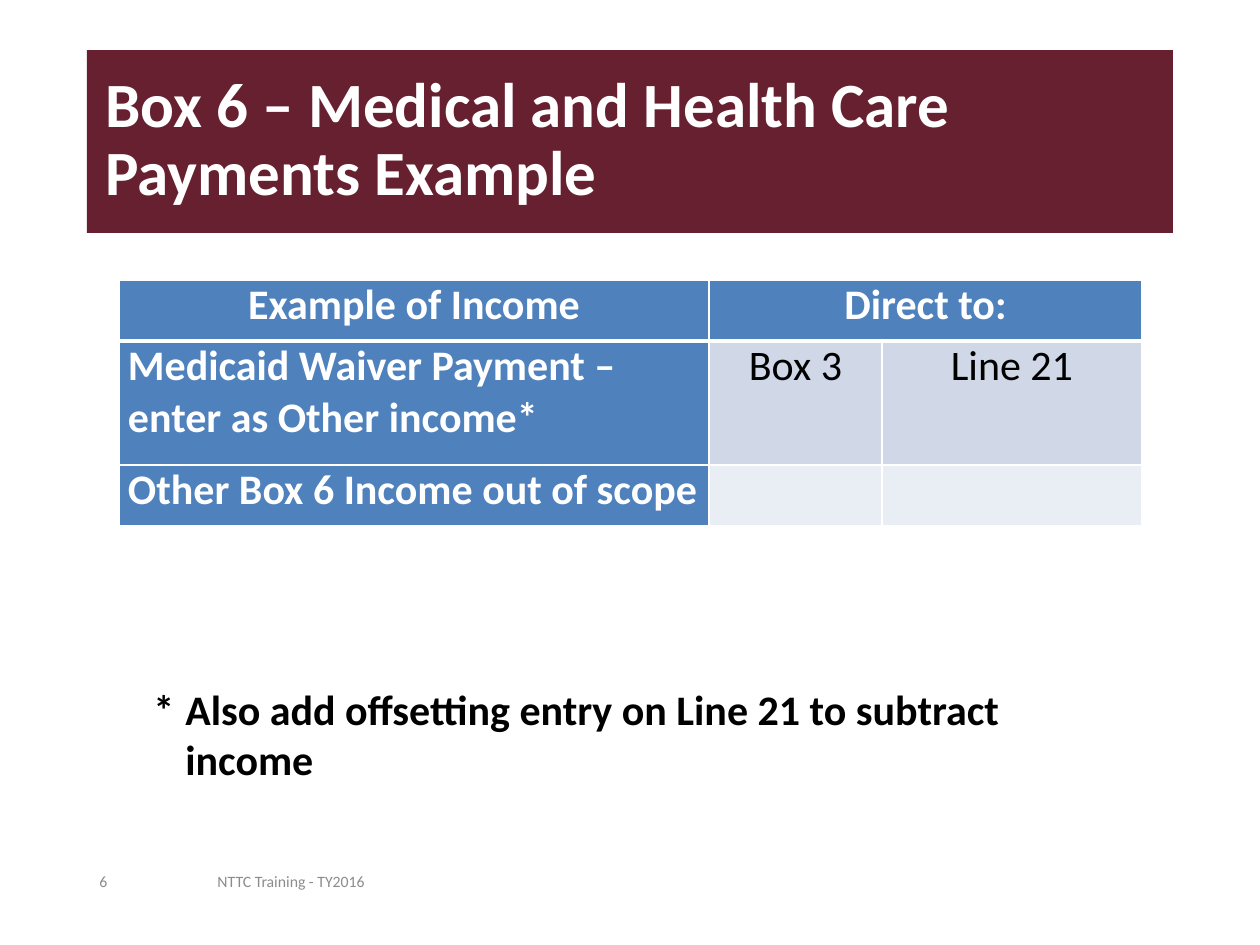
from lxml import etree
from pptx import Presentation
from pptx.dml.color import RGBColor
from pptx.enum.shapes import MSO_SHAPE
from pptx.enum.text import MSO_ANCHOR, PP_ALIGN
from pptx.oxml.ns import qn
from pptx.util import Emu, Pt

RECTANGLE = MSO_SHAPE.RECTANGLE
TOP, MIDDLE = MSO_ANCHOR.TOP, MSO_ANCHOR.MIDDLE
LEFT, CENTER = PP_ALIGN.LEFT, PP_ALIGN.CENTER

EMU_PER_PX = 914400 / 126
FONT = "Calibri"
COLORS = {
    "banner": "67202F",
    "header": "4F81BD",
    "band_dark": "D0D8E8",
    "band_light": "E9EDF4",
    "white": "FFFFFF",
    "black": "000000",
    "footer": "8C8C8C",
}


def px(length):
    return Emu(round(length * EMU_PER_PX))


def rgb(name):
    return RGBColor.from_string(COLORS[name])


def write_text(frame, text, size=24, color="black", bold=False, align=LEFT,
               anchor=TOP, margin=0, indent=0, line_spacing=None):
    """Fill a text frame with one formatted paragraph."""
    frame.word_wrap = True
    frame.vertical_anchor = anchor
    paragraph = frame.paragraphs[0]
    paragraph.text = text
    paragraph.alignment = align
    paragraph.line_spacing = line_spacing
    properties = paragraph._p.get_or_add_pPr()
    properties.set("marL", str(px(margin)))
    properties.set("indent", str(px(indent)))
    font = paragraph.runs[0].font
    font.name, font.size, font.bold = FONT, Pt(size), bold
    font.color.rgb = rgb(color)


def add_text(slide, box, text, **text_format):
    shape = slide.shapes.add_textbox(*map(px, box))
    write_text(shape.text_frame, text, **text_format)


def set_borders(cell, **widths):
    """Draw white borders; widths are points by side."""
    properties = cell._tc.get_or_add_tcPr()
    for position, side in enumerate("LRTB"):
        line = etree.Element(qn(f"a:ln{side}"), w=str(Pt(widths.get(side, 1))))
        fill = etree.SubElement(line, qn("a:solidFill"))
        etree.SubElement(fill, qn("a:srgbClr"), val=COLORS["white"])
        properties.insert(position, line)


def add_banner(slide, box, title):
    shape = slide.shapes.add_shape(RECTANGLE, *map(px, box))
    shape.shadow.inherit = False
    shape.fill.solid()
    shape.fill.fore_color.rgb = rgb("banner")
    shape.line.fill.background()
    write_text(shape.text_frame, title, size=36, color="white", bold=True,
               anchor=MIDDLE, margin=6, line_spacing=0.9)


def add_income_table(slide, box, columns, heights, rows):
    table = slide.shapes.add_table(len(rows), len(columns), *map(px, box)).table
    for column, width in zip(table.columns, columns):
        column.width = px(width)
    for row, height in zip(table.rows, heights):
        row.height = px(height)

    for r, texts in enumerate(rows):
        for c, text in enumerate(texts):
            cell = table.cell(r, c)
            is_heading = r == 0 or c == 0
            band = "band_dark" if r % 2 else "band_light"
            cell.fill.solid()
            cell.fill.fore_color.rgb = rgb("header" if is_heading else band)
            cell.margin_left = cell.margin_right = px(9)
            cell.margin_top = cell.margin_bottom = 0
            # Heavier rule under the header row
            set_borders(cell, T=3 if r == 1 else 1, B=3 if r == 0 else 1)
            if text:
                write_text(cell.text_frame, text, bold=is_heading,
                           color="white" if is_heading else "black",
                           align=LEFT if r and c == 0 else CENTER)
    table.cell(0, 1).merge(table.cell(0, 2))


def add_footer(slide, box, number, label):
    left, top, width, height = box
    label_offset = 118
    footer_format = {"size": 9, "color": "footer", "anchor": MIDDLE}
    add_text(slide, (left + label_offset, top, width - label_offset, height),
             label, **footer_format)
    add_text(slide, (left, top, 88, height), number, **footer_format)


def main():
    presentation = Presentation()
    presentation.slide_width, presentation.slide_height = px(1260), px(945)
    slide = presentation.slides.add_slide(presentation.slide_layouts[6])

    # Title banner
    add_banner(slide, (87, 50, 1086, 183),
               "Box 6 – Medical and Health Care Payments Example")

    # Where each kind of income goes
    add_income_table(
        slide, (119, 280, 1023, 246),
        columns=(590, 173, 260), heights=(61, 124, 61),
        rows=(
            ("Example of Income", "Direct to:", ""),
            ("Medicaid Waiver Payment – enter as Other income*", "Box 3", "Line 21"),
            ("Other Box 6 Income out of scope", "", ""),
        ))

    # Footnote with a hanging asterisk
    add_text(slide, (141, 677, 1000, 115),
             "*\tAlso add offsetting entry on Line 21 to subtract income",
             bold=True, margin=32, indent=-32)

    # Footer
    add_footer(slide, (87, 856, 593, 50), "6", "NTTC Training - TY2016")

    presentation.save("out.pptx")


if __name__ == "__main__":
    main()
